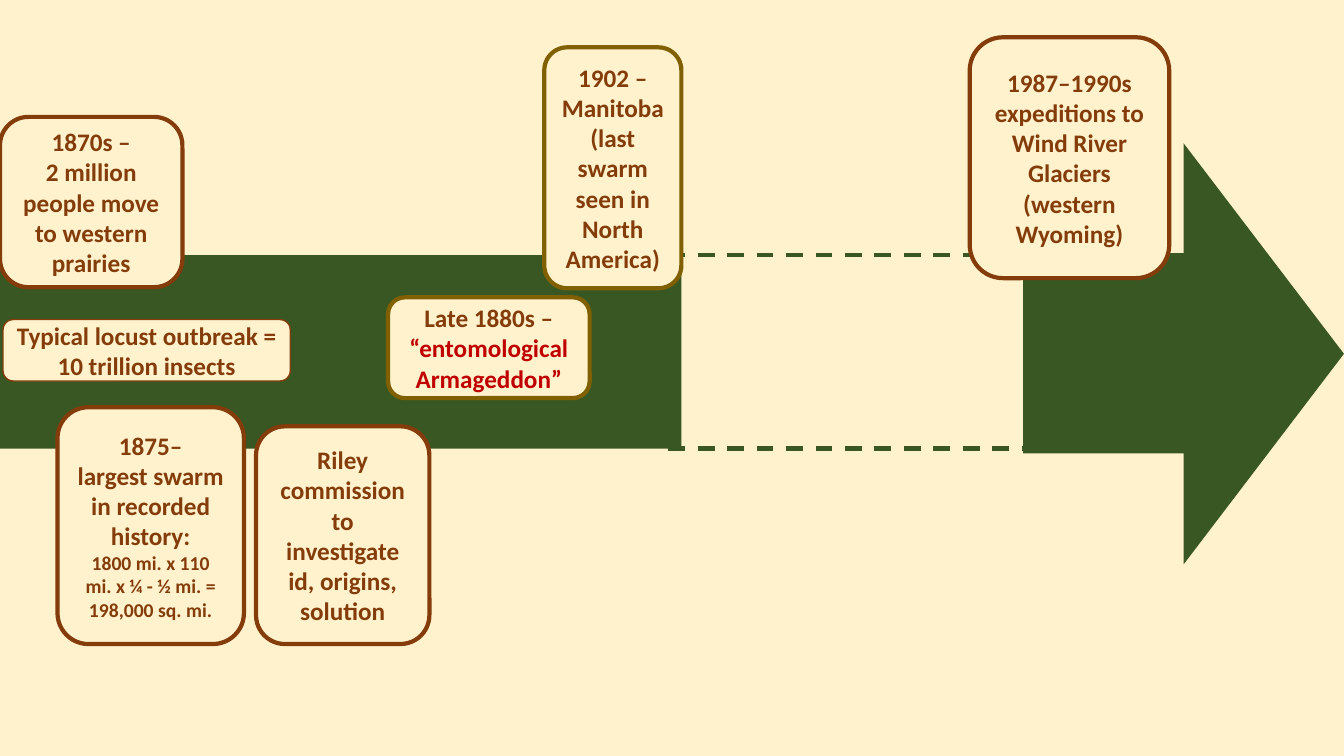
from dataclasses import dataclass

from lxml import etree
from pptx import Presentation
from pptx import util as u
from pptx.dml.color import RGBColor
from pptx.enum import dml, shapes, text
from pptx.oxml.ns import qn


@dataclass(frozen=True)
class Theme:
    font: str = "Calibri"
    cream: str = "FFF2CC"
    green: str = "385723"
    brown: str = "843C0B"
    olive: str = "806000"
    red: str = "C00000"
    body: int = 18
    detail: int = 14
    thick: int = 3
    thin: int = 1


THEME = Theme()
COLUMNS, ROWS = 80, 45
CELL = u.Inches(13.333) / COLUMNS
BAND_TOP, BAND_BOTTOM = 15.18, 26.7
BAND_END, DASH_START = 40.56, 39.78


def grid(*cells):
    """Turn counts of grid columns or rows into lengths."""
    return [u.Emu(round(cell * CELL)) for cell in cells]


def color(code):
    return RGBColor.from_string(code)


def add_block(page, kind, place, fill, line=None, width=THEME.thick):
    block = page.shapes.add_shape(kind, *grid(*place))
    block.shadow.inherit = False
    block.fill.solid()
    block.fill.fore_color.rgb = color(fill)
    if line:
        block.line.color.rgb = color(line)
        block.line.width = u.Pt(width)
    else:
        block.line.fill.background()
    return block


def add_span(para, words, size=THEME.body, ink=THEME.brown, bold=True):
    span = para.add_run()
    span.text = words
    span.font.name = THEME.font
    span.font.size = u.Pt(size)
    span.font.bold = bold
    span.font.color.rgb = color(ink)


def add_card(page, place, paragraphs, line=THEME.brown, width=THEME.thick):
    """Draw a rounded card; each paragraph is a list of (words, format) pairs."""
    card = add_block(page, shapes.MSO_SHAPE.ROUNDED_RECTANGLE, place,
                     THEME.cream, line, width)
    frame = card.text_frame
    frame.word_wrap = True
    frame.vertical_anchor = text.MSO_ANCHOR.MIDDLE
    for index, spans in enumerate(paragraphs):
        para = frame.add_paragraph() if index else frame.paragraphs[0]
        para.alignment = text.PP_ALIGN.CENTER
        for words, style in spans:
            add_span(para, words, **style)


def add_dashes(page, row, end):
    dashes = page.shapes.add_connector(
        shapes.MSO_CONNECTOR.STRAIGHT, *grid(DASH_START, row, end, row))
    dashes.line.color.rgb = color(THEME.green)
    dashes.line.width = u.Pt(THEME.thick)
    dashes.line.dash_style = dml.MSO_LINE.DASH
    etree.SubElement(dashes._element.spPr, qn("a:effectLst"))


def add_timeline(page):
    arrow = add_block(page, shapes.MSO_SHAPE.RIGHT_ARROW,
                      (60.9, 8.52, COLUMNS - 60.9, 25.08), THEME.green)
    arrow.adjustments[0] = 0.473
    arrow.adjustments[1] = 0.5
    add_block(page, shapes.MSO_SHAPE.RECTANGLE,
              (0, BAND_TOP, BAND_END, BAND_BOTTOM - BAND_TOP), THEME.green)
    add_dashes(page, BAND_TOP, 74.94)
    add_dashes(page, BAND_BOTTOM, 61.74)


def main():
    deck = Presentation()
    deck.slide_width, deck.slide_height = grid(COLUMNS, ROWS)
    page = deck.slides.add_slide(deck.slide_layouts[6])
    page.background.fill.solid()
    page.background.fill.fore_color.rgb = color(THEME.cream)

    add_timeline(page)
    add_card(page, (23.1, 17.7, 12, 6),
             [[("Late 1880s – ", {}),
               ("“entomological Armageddon”", {"ink": THEME.red})]],
             line=THEME.olive)
    add_card(page, (3.42, 24.24, 11.1, 14.1),
             [[("1875–", {})],
              [("largest swarm in recorded history:", {})],
              [("1800 mi. x 110 mi. x ¼ - ½ mi. = 198,000 sq. mi.",
                {"size": THEME.detail})]])
    add_card(page, (32.4, 2.82, 8.16, 14.34),
             [[("1902 – Manitoba (last swarm seen in North America)", {})]],
             line=THEME.olive)
    add_card(page, (15.24, 25.38, 10.32, 12.96),
             [[("Riley commission to investigate id, origins, solution", {})]])
    add_card(page, (57.72, 2.22, 11.88, 14.34),
             [[("1987–1990s expeditions to Wind River Glaciers "
                "(western Wyoming)", {})]])
    add_card(page, (0, 6.96, 10.86, 10.14),
             [[("1870s –", {})],
              [("2 million people move to western prairies", {})]])
    add_card(page, (0.18, 19.02, 17.1, 3.66),
             [[("Typical locust outbreak = 10 trillion insects", {})]],
             width=THEME.thin)
    deck.save("out.pptx")


if __name__ == "__main__":
    main()
